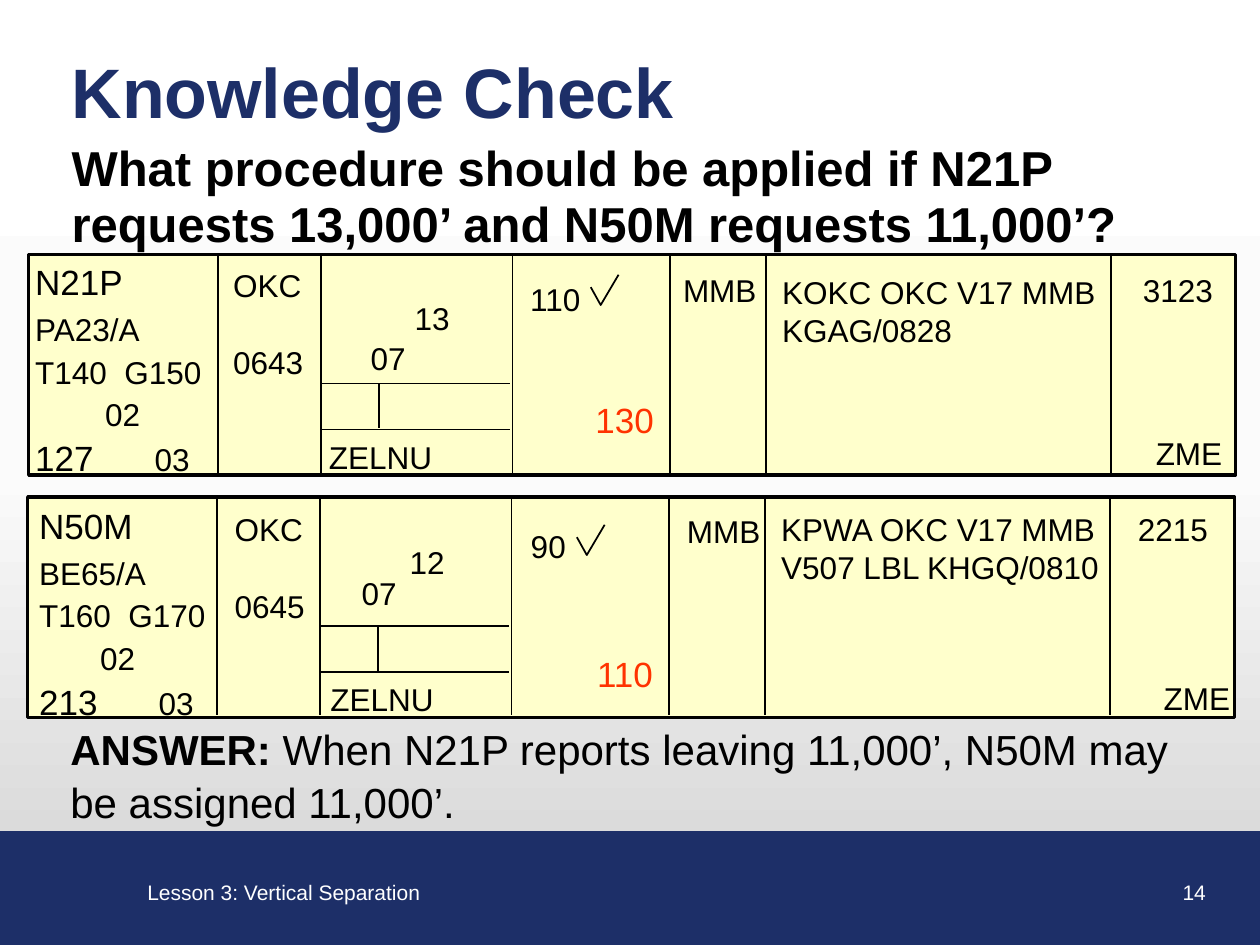
from copy import deepcopy

from lxml.etree import SubElement
from pptx import Presentation
from pptx.dml.color import RGBColor
from pptx.enum.shapes import MSO_CONNECTOR, MSO_SHAPE
from pptx.enum.text import MSO_ANCHOR, PP_ALIGN
from pptx.oxml.ns import qn
from pptx.util import Cm, Pt

NAVY = RGBColor(0x1D, 0x2F, 0x68)
CREAM = RGBColor(0xFF, 0xFF, 0xCC)
RED = RGBColor(0xFF, 0x33, 0x00)
BLACK = RGBColor(0, 0, 0)
WHITE = RGBColor(0xFF, 0xFF, 0xFF)
SKY = [(0, WHITE), (0.5, RGBColor(0xFB, 0xFB, 0xFB)), (1, RGBColor(0xD0, 0xD0, 0xD0))]

FIRST = {
    "side": (0, 0, "N21P", "PA23/A", "T140\tG150", "02", 1.41, "127", "03"),
    "fix": (3.99, 0.1, "OKC", "0643"),
    "cells": [
        (6.76, 1.57, 1.2, "07"), (7.65, 0.76, 1.6, "13"),
        (5.92, 3.58, 2.5, "ZELNU"), (9.98, 0.38, 1.45, "110"),
        (13.06, 0.2, 2.4, "MMB"), (15.06, 0.25, 6.86, "KOKC OKC V17 MMB KGAG/0828"),
        (22.33, 0.2, 2.16, "3123"),
    ],
    "zone": (22.3, 3.48, 2.18, "ZME"),
    "level": (11.1, 2.77, 1.83, "130"),
    "tick": (11.33, 0.41),
}
SECOND = {
    "side": (0.1, 0.02, "N50M", "BE65/A", "T160\tG170", "02", 1.23, "213", "03"),
    "fix": (4.04, 0.13, "OKC", "0645"),
    "cells": [
        (6.6, 1.42, 1.2, "07"), (7.57, 0.79, 1.6, "12"),
        (5.97, 3.56, 2.5, "ZELNU"), (10.01, 0.48, 1.2, "90"),
        (13.16, 0.18, 2.4, "MMB"),
        (15.06, 0.13, 6.68, "KPWA OKC V17 MMB V507 LBL KHGQ/0810"),
        (22.25, 0.13, 2.16, "2215"),
    ],
    "zone": (22.3, 3.53, 2.54, "ZME"),
    "level": (10.95, 3, 2.18, "110"),
    "tick": (11.07, 0.56),
}


def add_run(para, text, size, color=BLACK, bold=False):
    """Append one formatted run to a paragraph."""
    run = para.add_run()
    run.text = text
    font = run.font
    font.name, font.size, font.bold = "Arial", Pt(size), bold
    font.color.rgb = color


def add_tab(para, pos):
    """Give a paragraph one left tab stop."""
    tabs = SubElement(para._p.get_or_add_pPr(), qn("a:tabLst"))
    SubElement(tabs, qn("a:tab"), pos=str(Cm(pos)), algn="l")


def add_box(shapes, x, y, wide, high=1.02, inset=0.13):
    """Add a wrapping text box and return its frame."""
    frame = shapes.add_textbox(Cm(x), Cm(y), Cm(wide), Cm(high)).text_frame
    frame.word_wrap = True
    frame.margin_left = frame.margin_right = Cm(inset)
    frame.margin_top = frame.margin_bottom = Cm(0.13)
    return frame


def add_label(shapes, x, y, wide, text, size=18, color=BLACK, align=PP_ALIGN.LEFT):
    """Add a text box that holds a single run."""
    para = add_box(shapes, x, y, wide).paragraphs[0]
    para.alignment = align
    add_run(para, text, size, color)


def add_rule(shapes, x1, y1, x2, y2):
    """Draw a thin black line without a shadow."""
    rule = shapes.add_connector(MSO_CONNECTOR.STRAIGHT, Cm(x1), Cm(y1), Cm(x2), Cm(y2))
    rule.line.color.rgb = BLACK
    rule.line.width = Pt(1)
    SubElement(rule._element.spPr, qn("a:effectLst"))


def add_panel(shapes, x, y, wide, high, fill, edge, weight):
    """Draw a flat rectangle."""
    panel = shapes.add_shape(MSO_SHAPE.RECTANGLE, Cm(x), Cm(y), Cm(wide), Cm(high))
    panel.shadow.inherit = False
    panel.fill.solid()
    panel.fill.fore_color.rgb = fill
    panel.line.color.rgb = edge
    panel.line.width = Pt(weight)


def add_tick(shapes, x, y):
    """Draw the open check mark."""
    pen = shapes.build_freeform(Cm(x), Cm(y + 0.25))
    pen.add_line_segments([(Cm(x + 0.2), Cm(y + 0.61)), (Cm(x + 0.56), Cm(y))], close=False)
    tick = pen.convert_to_shape()
    tick.shadow.inherit = False
    tick.fill.background()
    tick.line.color.rgb = BLACK
    tick.line.width = Pt(1)


def add_side(shapes, x, y, call, craft, speed, code, indent, num, mark):
    """Write the aircraft column at the left of a strip."""
    frame = add_box(shapes, x, y, 3.76, 4.4)
    add_run(frame.paragraphs[0], call, 20)
    paras = []
    for text, size, gap in [(craft, 18, 4.2), (speed, 18, 2.7), (code, 18, 2.7), (num, 20, 2)]:
        para = frame.add_paragraph()
        para.space_before = Pt(gap)
        paras.append(para)
        if text == speed:
            add_tab(para, 1.8)
        elif text == num:
            add_tab(para, 2.41)
        add_run(para, text, size)
    paras[2]._p.get_or_add_pPr().set("marL", str(Cm(indent)))
    add_run(paras[3], "\t" + mark, 18)


def add_strip(slide, x, y, wide, high, data):
    """Build one flight progress strip inside the given box."""
    shapes = slide.shapes.add_group_shape().shapes
    add_panel(shapes, x, y, wide, high, CREAM, BLACK, 2)
    for pos in (3.81, 5.89, 9.75, 12.93, 14.86, 21.82):
        add_rule(shapes, x + pos, y, x + pos, y + high - 0.05)
    for drop in (2.6, 3.53):
        add_rule(shapes, x + 5.92, y + drop, x + 9.7, y + drop)
    add_rule(shapes, x + 7.06, y + 2.6, x + 7.06, y + 3.5)

    left, top, *words = data["side"]
    add_side(shapes, x + left, y + top, *words)
    left, top, fix, time = data["fix"]
    frame = add_box(shapes, x + left, y + top, 2.31, 2.4)
    add_run(frame.paragraphs[0], fix, 18)
    para = frame.add_paragraph()
    para.space_before = Pt(22.5)
    add_run(para, time, 18)

    for left, top, span, text in data["cells"]:
        add_label(shapes, x + left, y + top, span, text)
    left, top, span, text = data["zone"]
    add_label(shapes, x + left, y + top, span, text, align=PP_ALIGN.CENTER)
    left, top, span, text = data["level"]
    add_label(shapes, x + left, y + top, span, text, 20, RED, PP_ALIGN.CENTER)
    left, top = data["tick"]
    add_tick(shapes, x + left, y + top)


def add_sky(slide):
    """Fill the background with a vertical gradient."""
    fill = slide.background.fill
    fill.gradient()
    fill.gradient_angle = 270
    stops = next(slide._element.iter(qn("a:gsLst")))
    stops.append(deepcopy(stops[-1]))
    for stop, (pos, color) in zip(fill.gradient_stops, SKY):
        stop.position = pos
        stop.color.rgb = color


def add_foot(slide, x, y, wide, high):
    """Draw the footer bar with lesson name and page number."""
    add_panel(slide.shapes, x, y, wide, high, NAVY, NAVY, 0.75)
    add_label(slide.shapes, x + 2.84, y + 0.84, 8, "Lesson 3: Vertical Separation", 12, WHITE)
    add_label(slide.shapes, x + 19.16, y + 0.84, 5.28, "14", 12, WHITE, PP_ALIGN.RIGHT)


def set_holder(holder, x, y, wide, high, text, size, color, anchor):
    """Move a placeholder and write its bold text."""
    holder.left, holder.top, holder.width, holder.height = map(Cm, (x, y, wide, high))
    frame = holder.text_frame
    frame.vertical_anchor = anchor
    para = frame.paragraphs[0]
    para.alignment = PP_ALIGN.LEFT
    para.space_before = Pt(0)
    props = para._p.get_or_add_pPr()
    props.set("marL", "0")
    props.set("indent", "0")
    SubElement(props, qn("a:buNone"))
    add_run(para, text, size, color, True)
    return para


def add_answer(slide, x, y, wide, high):
    """Write the answer under the strips."""
    para = add_box(slide.shapes, x, y, wide, high, 0.25).paragraphs[0]
    para.line_spacing = 1.05
    add_run(para, "ANSWER: ", 24, bold=True)
    add_run(para, "When N21P reports leaving 11,000’, N50M may be assigned 11,000’.", 24)


def main():
    """Build and save the slide."""
    deck = Presentation()
    deck.slide_width, deck.slide_height = Cm(25.4), Cm(19.05)
    slide = deck.slides.add_slide(deck.slide_layouts[1])
    add_sky(slide)
    add_foot(slide, 0, 16.76, 25.4, 2.29)
    title, body = slide.placeholders
    set_holder(title, 1.19, 0.97, 23.55, 1.7, "Knowledge Check", 40, NAVY, MSO_ANCHOR.MIDDLE)
    ask = "What procedure should be applied if N21P requests 13,000’ and N50M requests 11,000’?"
    para = set_holder(body, 1.19, 2.74, 23.52, 2.41, ask, 28, BLACK, MSO_ANCHOR.TOP)
    para.line_spacing = 0.95
    add_strip(slide, 0.58, 5.13, 24.33, 4.45, FIRST)
    add_strip(slide, 0.56, 10.02, 24.33, 4.45, SECOND)
    add_answer(slide, 1.17, 14.4, 23.29, 2.31)
    deck.save("out.pptx")


if __name__ == "__main__":
    main()
